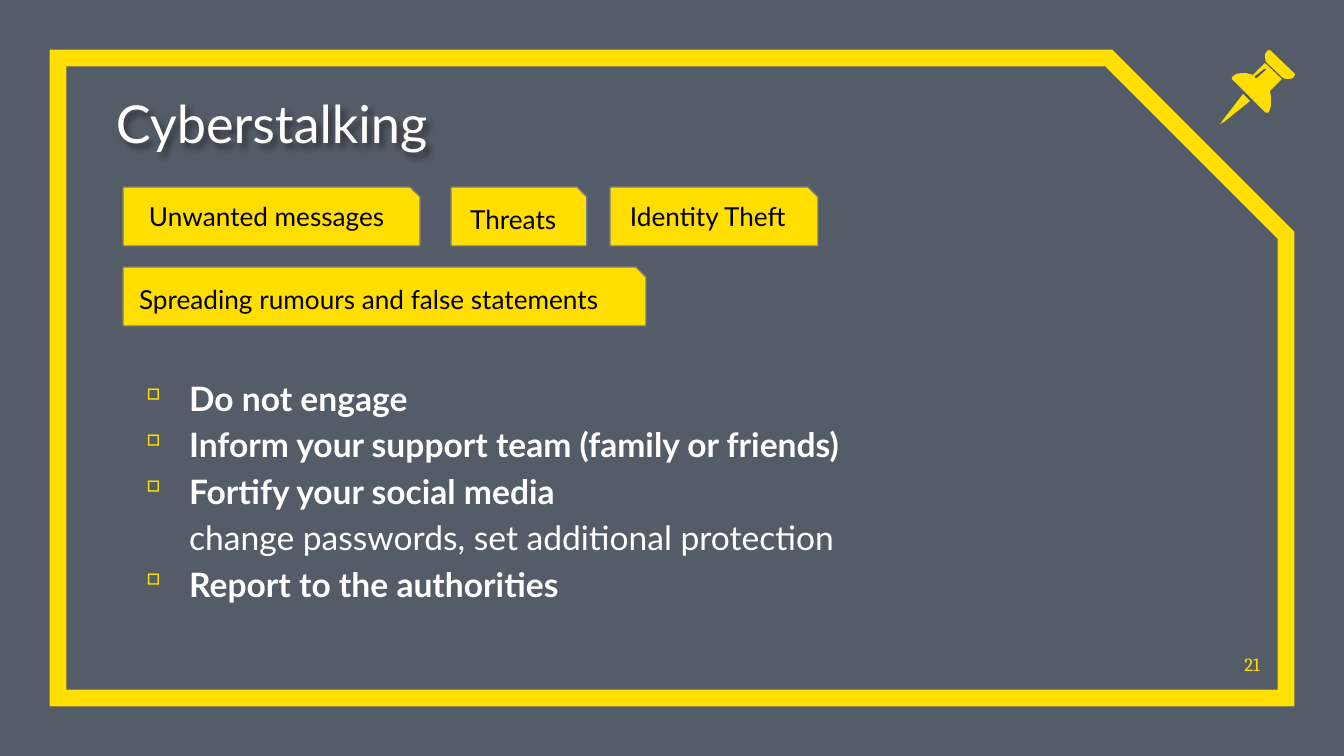
from lxml.etree import SubElement as Sub
from pptx import Presentation
from pptx.dml.color import RGBColor
from pptx.enum.shapes import MSO_SHAPE as Shape
from pptx.enum.text import MSO_ANCHOR as Anchor, PP_ALIGN as Align
from pptx.oxml.ns import qn
from pptx.util import Emu, Pt

PX = 914400 / 134.4
WIDE, HIGH = 1344, 756
GOLD, NAVY, GREY, WHITE, BLACK = "FFDE00", "040F20", "717881", "FFFFFF", "000000"

NEEDLE = [(23, 44), (3, 70), (0, 74), (4, 72), (30, 51)]
HEAD = [(49, 0), (47, 1), (46, 3), (45, 4), (45, 8), (46, 12), (63, 28), (66, 29),
        (70, 29), (73, 28), (75, 25), (75, 24), (51, 1)]
SLIT = [(44, 19), (46, 19), (46, 20), (37, 28), (35, 28), (35, 26)]
BODY = [(45, 13), (33, 25), (30, 24), (26, 23), (21, 23), (16, 24), (12, 27),
        (12, 29), (45, 62), (47, 63), (49, 62), (50, 59), (51, 56), (51, 47),
        (50, 41), (62, 29)]

# chip left, top, width; label offset x, y and width; wording
CHIPS = [
    (123, 187, 297, 13, 0, 285, "Unwanted messages"),
    (451, 187, 136, 6, 3, 124, "Threats"),
    (610, 187, 208, 7, 0, 267, "Identity Theft"),
    (123, 267, 523, 3, 3, 637, "Spreading rumours and false statements"),
]
ADVICE = [
    ("Do not engage", ""),
    ("Inform your support team (family or friends)", ""),
    ("Fortify your social media", "change passwords, set additional protection"),
    ("Report to the authorities", ""),
]


def px(*nums):
    return [Emu(round(n * PX)) for n in nums]


def rgb(code):
    return RGBColor.from_string(code)


def paint(shape, fill=None, line=None, width=0.75):
    shape.shadow.inherit = False
    if fill:
        shape.fill.solid()
        shape.fill.fore_color.rgb = rgb(fill)
    else:
        shape.fill.background()
    if line:
        shape.line.color.rgb = rgb(line)
        shape.line.width = Pt(width)
    else:
        shape.line.fill.background()


def style(para, size, color, face="Lato", bold=False):
    font = para.font
    font.size, font.name, font.bold = Pt(size), face, bold
    font.color.rgb = rgb(color)


def text_box(slide, box, anchor=Anchor.TOP, pad=0):
    shape = slide.shapes.add_textbox(*px(*box))
    frame = shape.text_frame
    frame.word_wrap = True
    frame.vertical_anchor = anchor
    frame.margin_left, frame.margin_top, frame.margin_right, frame.margin_bottom = px(*[pad] * 4)
    return shape


def backdrop(slide, box):
    """Tinted ground with the gold frame set in from its edges."""
    x, y, w, h = box
    ground = slide.shapes.add_shape(Shape.RECTANGLE, *px(*box))
    paint(ground, NAVY)
    tint = ground.fill._xPr.find(".//" + qn("a:srgbClr"))
    Sub(tint, qn("a:alpha"), val="68000")
    inset = 58
    frame = slide.shapes.add_shape(
        Shape.SNIP_1_RECTANGLE, *px(x + inset, y + inset, w - 2 * inset, h - 2 * inset))
    frame.adjustments[0] = 0.277
    paint(frame, line=GOLD, width=9)
    Sub(frame.line._get_or_add_ln(), qn("a:miter"), lim="800000")


def pin(slide, x, y):
    group = slide.shapes.add_group_shape()
    for first, *rest in ([NEEDLE], [HEAD], [BODY, SLIT]):
        pen = group.shapes.build_freeform(*first[0], scale=PX)
        pen.add_line_segments(first[1:], close=True)
        for hole in rest:
            pen.move_to(*hole[0])
            pen.add_line_segments(hole[1:], close=True)
        paint(pen.convert_to_shape(*px(x, y)), GOLD)


def title(slide, box, words):
    shape = text_box(slide, box, Anchor.BOTTOM)
    para = shape.text_frame.paragraphs[0]
    para.text = words
    style(para, 28, WHITE)
    glow = Sub(Sub(shape._element.spPr, qn("a:effectLst")), qn("a:outerShdw"),
               blurRad="38100", dist="38100", dir="2700000", algn="tl")
    Sub(Sub(glow, qn("a:srgbClr"), val=BLACK), qn("a:alpha"), val="43000")


def chip(slide, x, y, w, dx, dy, span, words):
    """Snipped gold tag with its label offset by dx, dy."""
    tag = slide.shapes.add_shape(Shape.SNIP_1_RECTANGLE, *px(x, y, w, 59))
    paint(tag, GOLD, GREY)
    label = text_box(slide, (x + dx, y + dy, span, 54), pad=13)
    para = label.text_frame.paragraphs[0]
    para.text = words
    style(para, 14, BLACK)


def bullet(para):
    props = para._p.get_or_add_pPr()
    props.set("marL", "457200")
    props.set("indent", "-342900")
    Sub(Sub(props, qn("a:buClr")), qn("a:srgbClr"), val=GOLD)
    Sub(props, qn("a:buChar"), char="▫")


def advice(slide, box, items):
    frame = text_box(slide, box).text_frame
    for i, (lead, more) in enumerate(items):
        para = frame.paragraphs[0] if i == 0 else frame.add_paragraph()
        para.line_spacing = 1.15
        bullet(para)
        style(para, 18, WHITE, bold=True)
        para.add_run().text = lead
        if more:
            para.add_line_break()
            run = para.add_run()
            run.text = more
            run.font.bold = False


def number(slide, box, words):
    para = text_box(slide, box, Anchor.BOTTOM).text_frame.paragraphs[0]
    para.text = words
    para.alignment = Align.RIGHT
    style(para, 10, GOLD, "Cambria")


def main():
    deck = Presentation()
    deck.slide_width, deck.slide_height = px(WIDE, HIGH)
    slide = deck.slides.add_slide(deck.slide_layouts[6])
    backdrop(slide, (0, 0, WIDE, HIGH))
    title(slide, (116, 83, 988, 71), "Cyberstalking")
    advice(slide, (122, 372, 1090, 384), ADVICE)
    number(slide, (1224, 637, 36, 38), "21")
    pin(slide, 1220, 50)
    for item in CHIPS:
        chip(slide, *item)
    deck.save("out.pptx")


if __name__ == "__main__":
    main()
